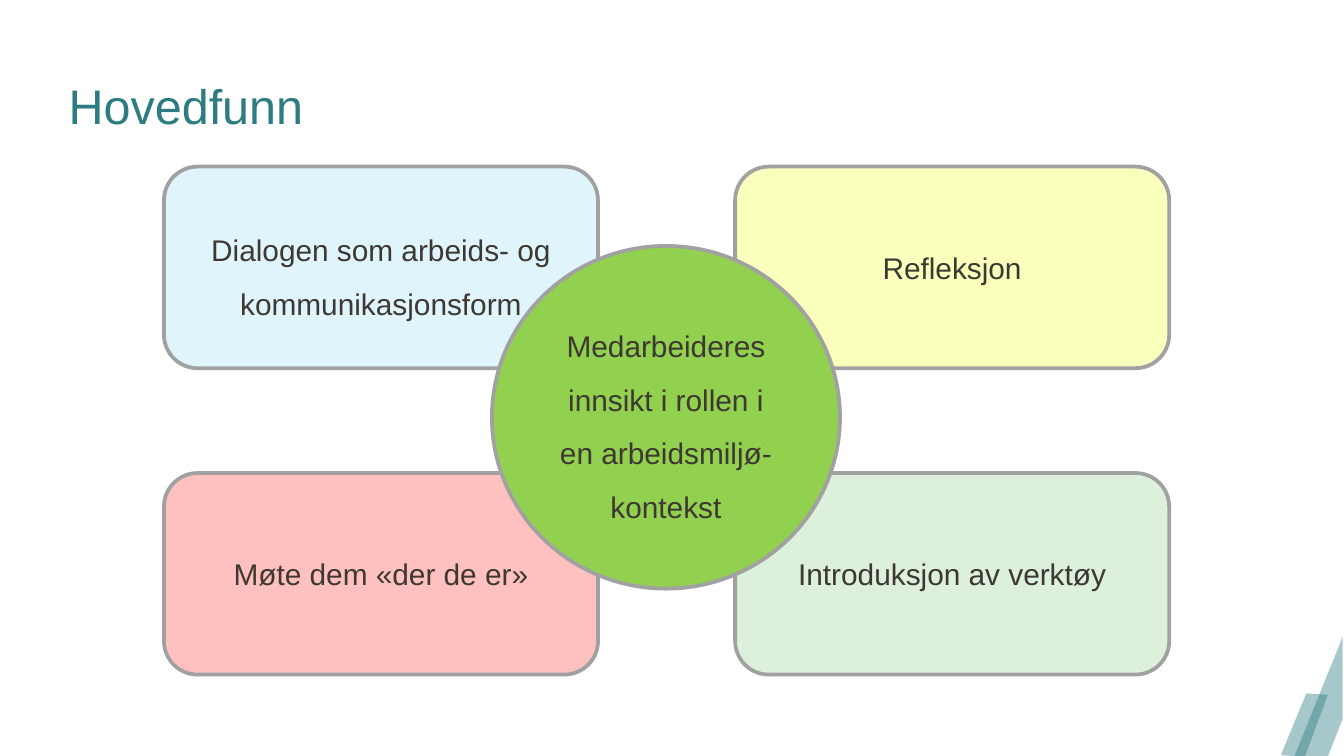
from lxml import etree
from pptx import Presentation
from pptx import util as u
from pptx.dml.color import RGBColor
from pptx.enum import shapes, text
from pptx.oxml import ns

PX = 9144
SLIDE_WIDTH = 1000 * PX
SLIDE_HEIGHT = SLIDE_WIDTH * 9 // 16
FONT = "Arial"
TEAL = RGBColor(0x2D, 0x7C, 0x81)
INK = RGBColor(0x3E, 0x38, 0x32)
BORDER = RGBColor(0xA1, 0xA1, 0xA1)
SKY = RGBColor(0xE0, 0xF5, 0xFB)
YELLOW = RGBColor(0xFB, 0xFF, 0xBC)
PINK = RGBColor(0xFF, 0xC0, 0xC0)
MINT = RGBColor(0xDC, 0xF0, 0xDC)
GREEN = RGBColor(0x92, 0xD0, 0x50)

CARD_WIDTH, CARD_HEIGHT = 323, 150
CIRCLE_TOP, CIRCLE_WIDTH, CIRCLE_HEIGHT = 59, 259, 255
CARDS = [
    ("Dialogen som arbeids- og kommunikasjonsform", SKY, 1.5),
    ("Refleksjon", YELLOW, 1),
    ("Møte dem «der de er»", PINK, 1),
    ("Introduksjon av verktøy", MINT, 1),
]
CIRCLE_LINES = ["Medarbeideres innsikt i rollen i en arbeidsmiljø-", "kontekst"]
BANDS = [
    [(0, 88), (19, 42), (35, 43), (18, 89)],
    [(10, 89), (46, 0), (46, 61), (35, 89)],
]


def to_emu(box):
    """Turn a box in px into EMU lengths."""
    return [u.Emu(length * PX) for length in box]


def add_run(paragraph, words, size, color):
    """Add one formatted run to a paragraph."""
    run = paragraph.add_run()
    run.text = words
    run.font.name = FONT
    run.font.size = u.Pt(size)
    run.font.color.rgb = color


def add_node(group, kind, box, fill, lines, spacing):
    """Add an outlined shape with centred text."""
    shape = group.shapes.add_shape(kind, *to_emu(box))
    shape.shadow.inherit = False
    shape.fill.solid()
    shape.fill.fore_color.rgb = fill
    shape.line.color.rgb = BORDER
    shape.line.width = u.Pt(2)
    frame = shape.text_frame
    frame.word_wrap = True
    frame.vertical_anchor = text.MSO_ANCHOR.MIDDLE
    for index, words in enumerate(lines):
        paragraph = frame.add_paragraph() if index else frame.paragraphs[0]
        paragraph.alignment = text.PP_ALIGN.CENTER
        paragraph.line_spacing = spacing
        add_run(paragraph, words, 16, INK)


def add_corner(slide, box):
    """Draw the translucent bands in the lower right corner."""
    left, top = box[:2]
    for band in BANDS:
        points = [((left + x) * PX, (top + y) * PX) for x, y in band]
        builder = slide.shapes.build_freeform(*points[0])
        builder.add_line_segments(points[1:], close=True)
        shape = builder.convert_to_shape()
        shape.shadow.inherit = False
        shape.line.fill.background()
        shape.fill.solid()
        shape.fill.fore_color.rgb = TEAL
        color = shape._element.spPr.find(".//" + ns.qn("a:srgbClr"))
        etree.SubElement(color, ns.qn("a:alpha"), val="42000")


def add_title(slide, box):
    """Place and fill the title placeholder."""
    title = slide.shapes.title
    title.left, title.top, title.width, title.height = to_emu(box)
    frame = title.text_frame
    frame.auto_size = text.MSO_AUTO_SIZE.NONE
    frame.vertical_anchor = text.MSO_ANCHOR.BOTTOM
    paragraph = frame.paragraphs[0]
    paragraph.alignment = text.PP_ALIGN.LEFT
    add_run(paragraph, "Hovedfunn", 26, TEAL)


def add_findings(slide, box):
    """Place four cards in the corners of the box and a circle over them."""
    left, top, width, height = box
    group = slide.shapes.add_group_shape()
    for index, (words, fill, spacing) in enumerate(CARDS):
        row, column = divmod(index, 2)
        card = (left + column * (width - CARD_WIDTH),
                top + row * (height - CARD_HEIGHT), CARD_WIDTH, CARD_HEIGHT)
        add_node(group, shapes.MSO_SHAPE.ROUNDED_RECTANGLE, card, fill, [words], spacing)
    circle = (left + (width - CIRCLE_WIDTH) // 2, top + CIRCLE_TOP,
              CIRCLE_WIDTH, CIRCLE_HEIGHT)
    add_node(group, shapes.MSO_SHAPE.OVAL, circle, GREEN, CIRCLE_LINES, 1.5)


def main():
    """Build and save the presentation."""
    presentation = Presentation()
    presentation.slide_width = u.Emu(SLIDE_WIDTH)
    presentation.slide_height = u.Emu(SLIDE_HEIGHT)
    slide = presentation.slides.add_slide(presentation.slide_layouts[5])
    add_corner(slide, (953, 474, 46, 89))
    add_title(slide, (41, 16, 917, 89))
    add_findings(slide, (122, 124, 748, 378))
    presentation.save("out.pptx")


if __name__ == "__main__":
    main()
